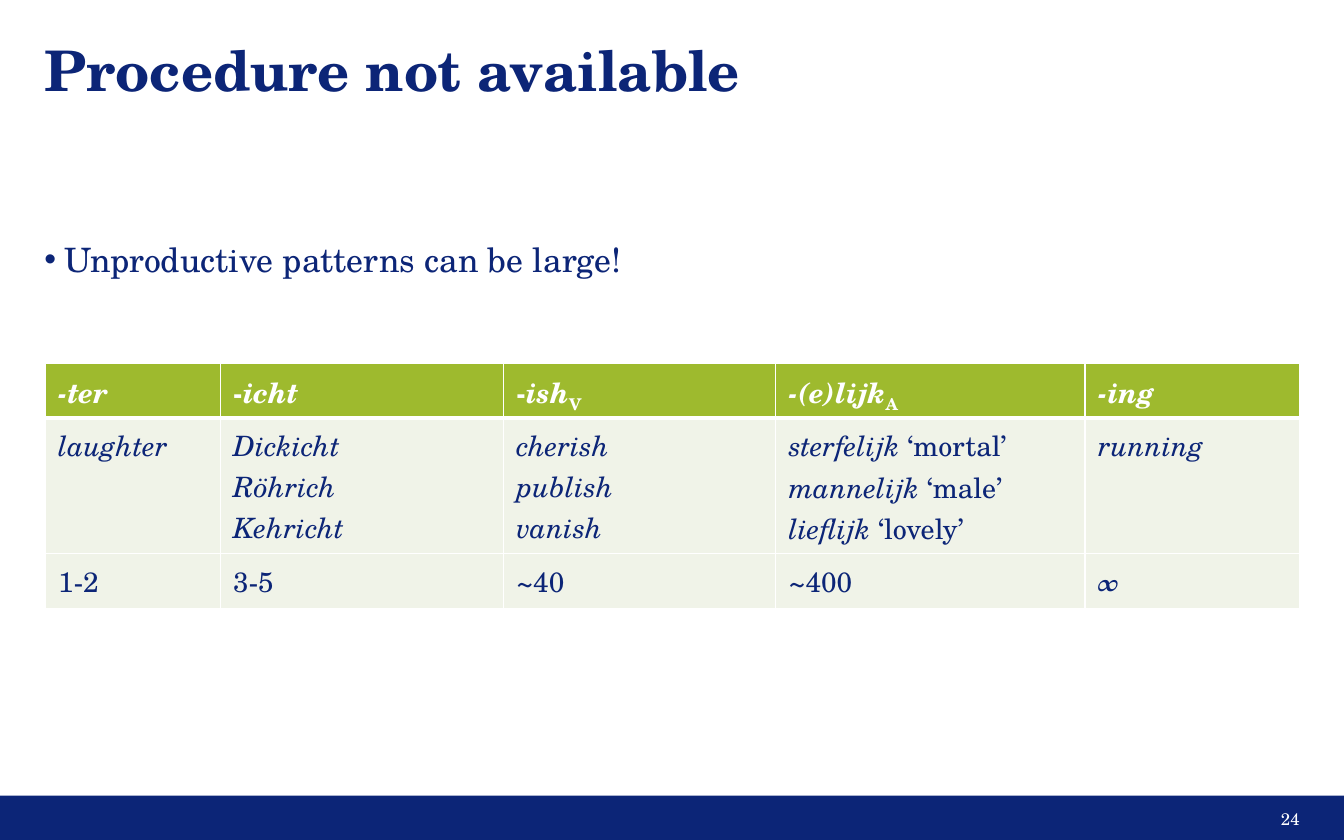
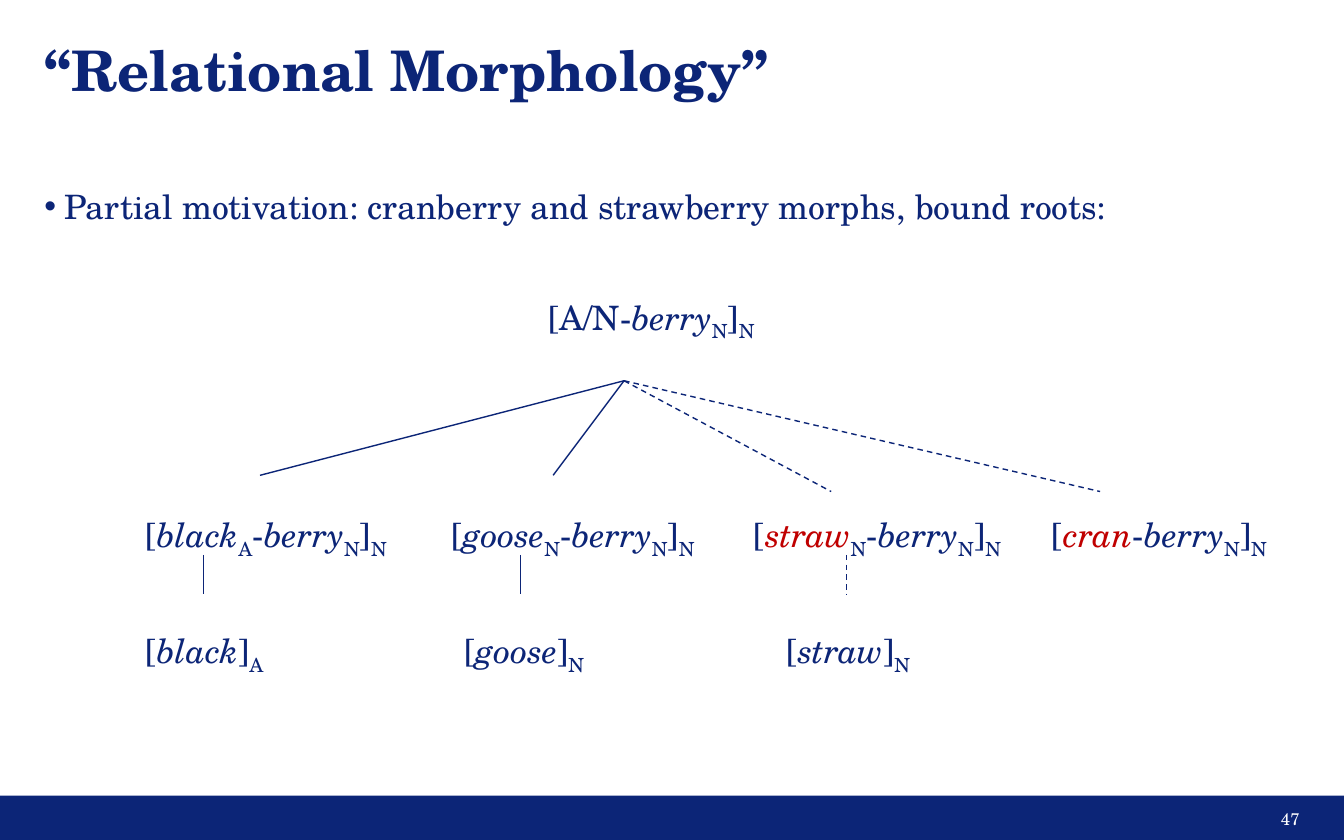
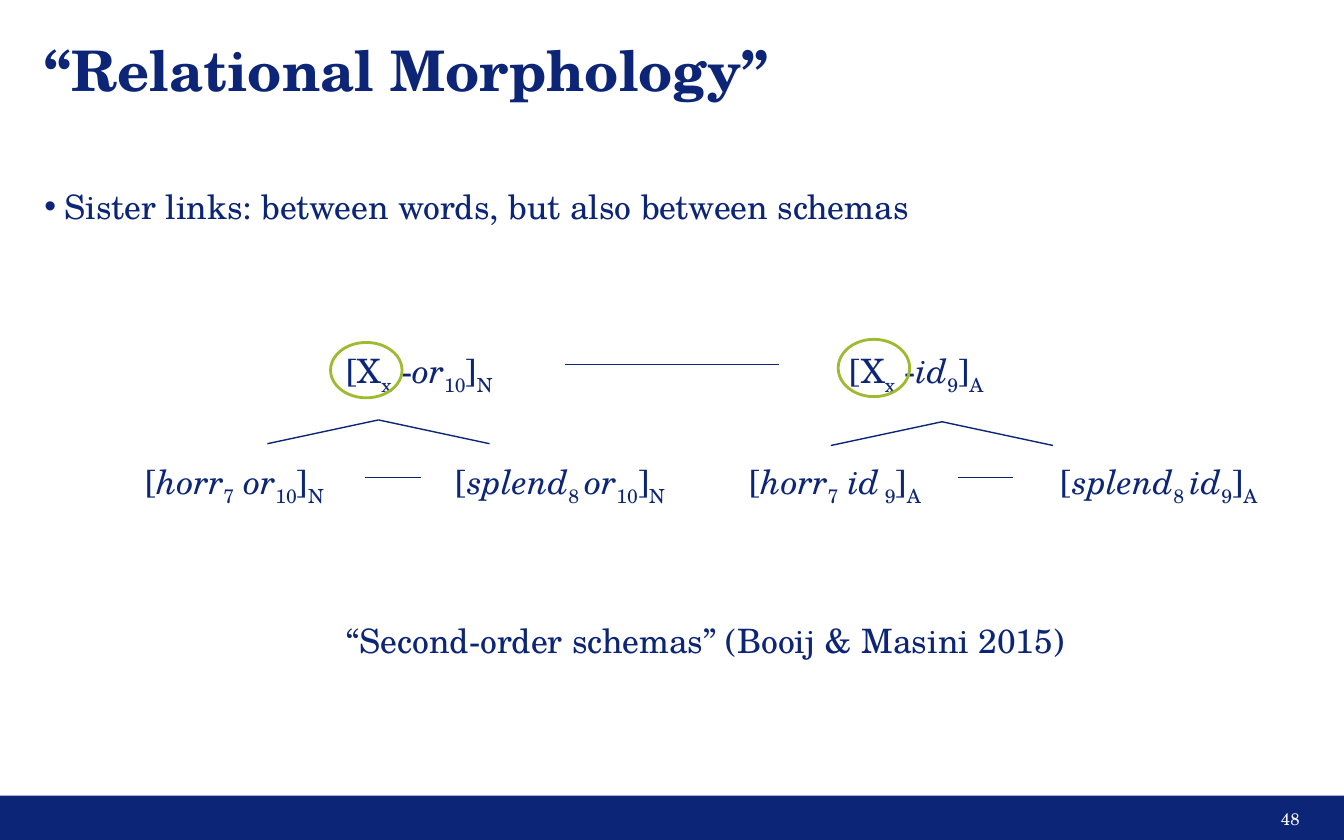
from lxml.etree import SubElement
from pptx import Presentation
from pptx.dml.color import RGBColor
from pptx.enum.dml import MSO_LINE
from pptx.enum.shapes import MSO_CONNECTOR, MSO_SHAPE
from pptx.enum.text import MSO_ANCHOR, PP_ALIGN
from pptx.oxml.ns import qn
from pptx.util import Pt

NAVY = RGBColor(0x0C, 0x25, 0x77)
GREEN = RGBColor(0x9E, 0xBA, 0x2E)
PALE = RGBColor(0xF0, 0xF3, 0xE8)
RED = RGBColor(0xC0, 0x00, 0x00)
WHITE = RGBColor(0xFF, 0xFF, 0xFF)
FONT = "TeX Gyre Schola"
WIDTH, HEIGHT, MARGIN, BODY_WIDTH = 960.5, 600.5, 31.7, 897


def write(p, text, size=24, color=NAVY, bold=False):
    """Fill a paragraph; * toggles italic, _ subscript and ^ red."""
    state = {"*": False, "_": False, "^": False}
    chunk = ""
    for char in text + "\0":
        if char not in state and char != "\0":
            chunk += char
            continue
        if chunk:
            r = p.add_run()
            r.text = chunk
            r.font.name, r.font.size, r.font.bold = FONT, Pt(size), bold
            r.font.italic = state["*"]
            r.font.color.rgb = RED if state["^"] else color
            if state["_"]:
                r._r.get_or_add_rPr().set("baseline", "-25000")
            chunk = ""
        if char in state:
            state[char] = not state[char]


class Deck:
    """Hold the presentation, its style and the current slide."""

    def __init__(self):
        self.prs = Presentation()
        self.prs.slide_width, self.prs.slide_height = Pt(WIDTH), Pt(HEIGHT)

    def slide(self, title, number):
        self.s = self.prs.slides.add_slide(self.prs.slide_layouts[6])
        band = self.shape(MSO_SHAPE.RECTANGLE, 0, 568.8, WIDTH, 31.7)
        band.fill.solid()
        band.fill.fore_color.rgb = NAVY
        band.line.fill.background()
        self.text(title, MARGIN, 31.7, BODY_WIDTH, 35.3, size=40, bold=True,
                  anchor=MSO_ANCHOR.MIDDLE)
        self.text(number, 720, 569.5, 208.8, 31, size=12, color=WHITE,
                  anchor=MSO_ANCHOR.MIDDLE, align=PP_ALIGN.RIGHT)

    def shape(self, kind, x, y, w, h):
        sp = self.s.shapes.add_shape(kind, Pt(x), Pt(y), Pt(w), Pt(h))
        sp.shadow.inherit = False
        return sp

    def ring(self, x, y, w, h):
        sp = self.shape(MSO_SHAPE.OVAL, x, y, w, h)
        sp.fill.background()
        sp.line.color.rgb, sp.line.width = GREEN, Pt(2)

    def text(self, text, x, y, w=190, h=36, anchor=MSO_ANCHOR.TOP,
             align=PP_ALIGN.LEFT, **style):
        tf = self.s.shapes.add_textbox(Pt(x), Pt(y), Pt(w), Pt(h)).text_frame
        tf.margin_left = tf.margin_right = tf.margin_top = tf.margin_bottom = 0
        tf.word_wrap, tf.vertical_anchor = True, anchor
        p = tf.paragraphs[0]
        p.alignment = align
        write(p, text, **style)
        return p

    def bullet(self, text, y):
        p = self.text(text, MARGIN, y, BODY_WIDTH)
        pPr = p._p.get_or_add_pPr()
        pPr.set("marL", str(Pt(14.4)))
        pPr.set("indent", str(-Pt(14.4)))
        color = SubElement(pPr, qn("a:buClr"))
        SubElement(color, qn("a:srgbClr"), val=str(NAVY))
        SubElement(pPr, qn("a:buFont"), typeface="Arial")
        SubElement(pPr, qn("a:buChar"), char="•")

    def row(self, y, labels):
        for x, text in labels:
            self.text(text, x, y)

    def line(self, x1, y1, x2, y2, dashed=False):
        ln = self.s.shapes.add_connector(
            MSO_CONNECTOR.STRAIGHT, Pt(x1), Pt(y1), Pt(x2), Pt(y2))
        ln.line.color.rgb, ln.line.width = NAVY, Pt(1)
        if dashed:
            ln.line.dash_style = MSO_LINE.DASH
        SubElement(ln._element.spPr, qn("a:effectLst"))

    def table(self, x, y, widths, heights, rows):
        table = self.s.shapes.add_table(
            len(rows), len(widths), Pt(x), Pt(y),
            Pt(sum(widths)), Pt(sum(heights))).table
        table.first_row = table.horz_banding = False
        for column, width in zip(table.columns, widths):
            column.width = Pt(width)
        for i, (height, texts) in enumerate(zip(heights, rows)):
            table.rows[i].height = Pt(height)
            for j, text in enumerate(texts):
                self.cell(table.cell(i, j), text, i)

    def cell(self, cell, text, row):
        header = row == 0
        cell.margin_left = cell.margin_right = Pt(9.4)
        cell.margin_top = cell.margin_bottom = Pt(5)
        edges = {"L": 1, "R": 1, "T": 3 if row == 1 else 1,
                 "B": 3 if header else 1}
        for side, width in edges.items():
            ln = SubElement(cell._tc.get_or_add_tcPr(), qn("a:ln" + side),
                            w=str(Pt(width)))
            fill = SubElement(ln, qn("a:solidFill"))
            SubElement(fill, qn("a:srgbClr"), val=str(WHITE))
        cell.fill.solid()
        cell.fill.fore_color.rgb = GREEN if header else PALE
        tf = cell.text_frame
        for k, part in enumerate(text.split("\n")):
            p = tf.add_paragraph() if k else tf.paragraphs[0]
            write(p, part, size=20, color=WHITE if header else NAVY,
                  bold=header)


def unproductive_patterns(deck):
    deck.slide("Procedure not available", "24")
    deck.bullet("Unproductive patterns can be large!", 171)
    deck.table(32.2, 260, [125.1, 202.3, 194.6, 221.2, 153.2], [38.9, 97, 38.9], [
        ["*-ter*", "-*icht*", "-*ish*_V_", "*-(e)lijk*_A_", "*-ing*"],
        ["*laughter*", "*Dickicht*\n*Röhrich*\n*Kehricht*",
         "*cherish*\n*publish*\n*vanish*",
         "*sterfelijk* ‘mortal’\n*mannelijk* ‘male’\n*lieflijk* ‘lovely’",
         "*running*"],
        ["1-2", "3-5", "~40", "~400", "*∞*"],
    ])


def partial_motivation(deck):
    deck.slide("“Relational Morphology”", "47")
    deck.bullet("Partial motivation: cranberry and strawberry morphs, "
                "bound roots:", 133)
    deck.text("[A/N-*berry*_N_]_N_", 391.7, 212)
    deck.row(367.6, [(103.7, "[*black*_A_-*berry*_N_]_N_"),
                     (322.8, "[*goose*_N_-*berry*_N_]_N_"),
                     (538.8, "[^*straw*^_N_-*berry*_N_]_N_"),
                     (751.8, "[^*cran*^-*berry*_N_]_N_")])
    deck.row(450.6, [(103.7, "[*black*]_A_"), (332, "[*goose*]_N_"),
                     (562, "[*straw*]_N_")])
    for x, y, dashed in [(185.8, 339.8, False), (395.3, 339.8, False),
                         (594, 351.4, True), (786.2, 351.4, True)]:
        deck.line(446, 272.2, x, y, dashed)
    for x, dashed in [(145.4, False), (372.2, False), (604.8, True)]:
        deck.line(x, 396.7, x, 424.8, dashed)


def sister_links(deck):
    deck.slide("“Relational Morphology”", "48")
    deck.bullet("Sister links: between words, but also between schemas", 133)
    deck.row(250.4, [(247.7, "[X_x_ -*or*_10_]_N_"),
                     (607.4, "[X_x_ -*id*_9_]_A_")])
    deck.row(329.7, [(103.7, "[*horr*_7_* or*_10_]_N_"),
                     (325.8, "[*splend*_8 _*or*_10_]_N_"),
                     (535.5, "[*horr*_7_* id*_ 9_]_A_"),
                     (758.2, "[*splend*_8 _*id*_9_]_A_")])
    deck.text("“Second-order schemas” (Booij & Masini 2015)", 247.7, 443.4, 540)
    for x1, x2, y in [(260.6, 301, 341.3), (684.7, 724.3, 341.3),
                      (403.9, 556.6, 260.6)]:
        deck.line(x1, y, x2, y)
    for x, y in [(270.5, 300.2), (673.2, 301.5)]:
        for reach in (-79.4, 79.4):
            deck.line(x, y, x + reach, y + 17)
    deck.ring(236.2, 244.8, 51.1, 39.6)
    deck.ring(599, 242.6, 51.1, 41)


def main():
    deck = Deck()
    unproductive_patterns(deck)
    partial_motivation(deck)
    sister_links(deck)
    deck.prs.save("out.pptx")


if __name__ == "__main__":
    main()
